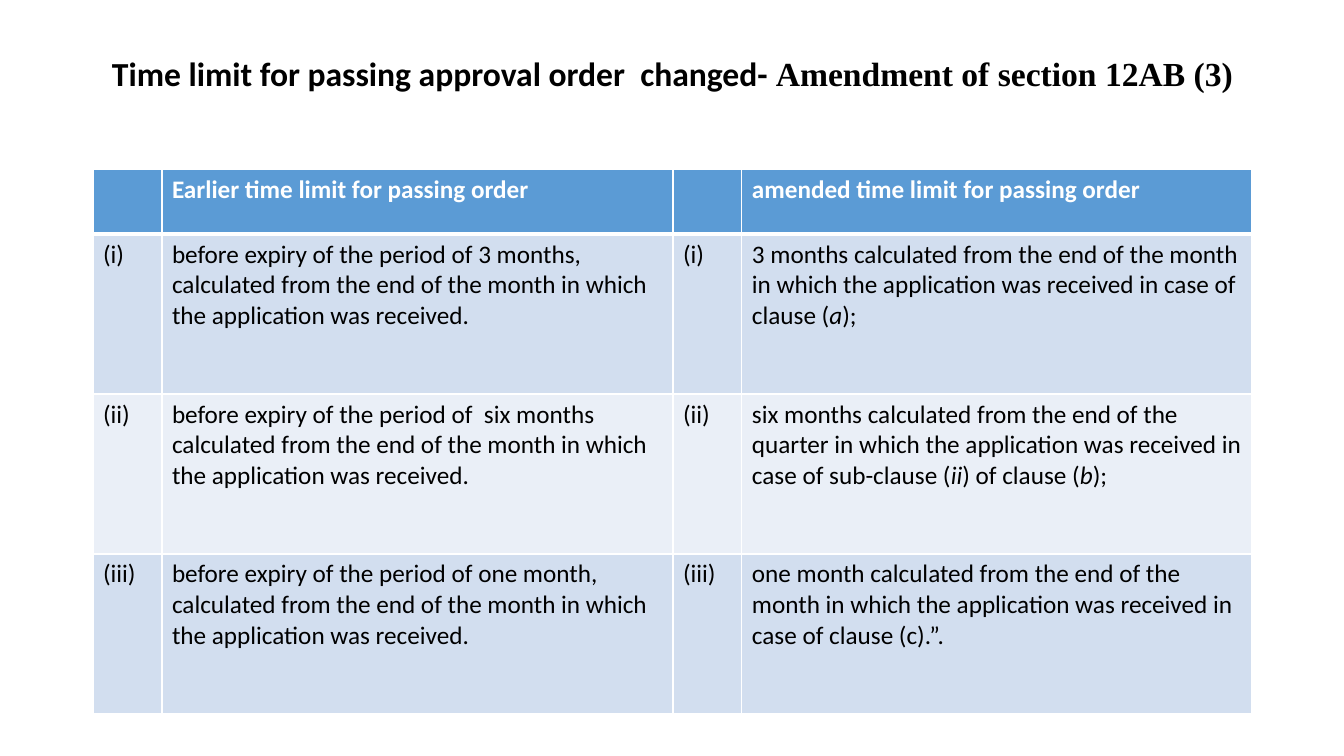
from lxml.etree import SubElement
from pptx import Presentation
from pptx.dml.color import RGBColor
from pptx.enum.text import MSO_ANCHOR, PP_ALIGN
from pptx.oxml.ns import qn
from pptx.util import Pt

TITLE = [
    ("Time limit for passing approval order  changed- ", "Calibri"),
    ("Amendment of section 12AB (3)", "Times New Roman"),
]
HEADINGS = ("", "Earlier time limit for passing order",
            "", "amended time limit for passing order")
# Asterisks enclose italic words.
LIMITS = [
    ("(i)",
     "before expiry of the period of 3 months, calculated from the end of "
     "the month in which the application was received.",
     "3 months calculated from the end of the month in which the application "
     "was received in case of clause (*a*);"),
    ("(ii)",
     "before expiry of the period of  six months  calculated from the end of "
     "the month in which the application was received.",
     "six months calculated from the end of the quarter in which the "
     "application was received in case of sub-clause (*ii*) of clause (*b*);"),
    ("(iii)",
     "before expiry of the period of one month,  calculated from the end of "
     "the month in which the application was received.",
     "one month calculated from the end of the month in which the application "
     "was received in case of clause (c).”."),
]

PX = 914400 / 100.8
SLIDE_W, SLIDE_H = 1344, 756
LEFT, WIDTH = 93, 1159
TITLE_TOP, TITLE_H = 40, 72
TABLE_TOP, HEADER_H, LIMIT_H = 169, 65, 160
COLUMNS = (69, 511, 69, 510)
BLACK, WHITE, HEADER_FILL = "000000", "FFFFFF", "5B9BD5"
BANDS = ("D2DEEF", "EAEFF7")


def px(length):
    return round(length * PX)


def color(value):
    return RGBColor.from_string(value)


def add_run(paragraph, text, size, ink, font="Calibri", bold=False, italic=False):
    run = paragraph.add_run()
    run.text = text
    run.font.name = font
    run.font.size = Pt(size)
    run.font.bold = bold
    run.font.italic = italic
    run.font.color.rgb = color(ink)


def set_borders(cell, top, bottom):
    """Draw white cell edges; must precede the fill, as the schema orders them."""
    properties = cell._tc.get_or_add_tcPr()
    for edge, points in (("L", 1), ("R", 1), ("T", top), ("B", bottom)):
        line = SubElement(properties, qn(f"a:ln{edge}"), w=str(Pt(points)))
        fill = SubElement(line, qn("a:solidFill"))
        SubElement(fill, qn("a:srgbClr"), val=WHITE)


def add_title(slide):
    box = slide.shapes.add_textbox(px(LEFT), px(TITLE_TOP), px(WIDTH), px(TITLE_H))
    frame = box.text_frame
    frame.word_wrap = True
    frame.vertical_anchor = MSO_ANCHOR.MIDDLE
    paragraph = frame.paragraphs[0]
    paragraph.alignment = PP_ALIGN.CENTER
    paragraph.line_spacing = 0.9
    for text, font in TITLE:
        add_run(paragraph, text, 24, BLACK, font, bold=True)


def add_limits_table(slide):
    rows = [HEADINGS] + [(number, earlier, number, amended)
                         for number, earlier, amended in LIMITS]
    heights = [HEADER_H] + [LIMIT_H] * len(LIMITS)
    table = slide.shapes.add_table(
        len(rows), len(COLUMNS), px(LEFT), px(TABLE_TOP),
        px(WIDTH), px(sum(heights))).table
    for column, width in zip(table.columns, COLUMNS):
        column.width = px(width)
    for r, (texts, height) in enumerate(zip(rows, heights)):
        table.rows[r].height = px(height)
        header = r == 0
        for c, text in enumerate(texts):
            cell = table.cell(r, c)
            set_borders(cell, top=3 if r == 1 else 1, bottom=3 if header else 1)
            cell.fill.solid()
            cell.fill.fore_color.rgb = color(HEADER_FILL if header else BANDS[(r - 1) % 2])
            paragraph = cell.text_frame.paragraphs[0]
            for part, words in enumerate(text.split("*")):
                if words:
                    add_run(paragraph, words, 18, WHITE if header else BLACK,
                            bold=header, italic=part % 2 == 1)


def main():
    deck = Presentation()
    deck.slide_width, deck.slide_height = px(SLIDE_W), px(SLIDE_H)
    slide = deck.slides.add_slide(deck.slide_layouts[6])
    add_title(slide)
    add_limits_table(slide)
    deck.save("out.pptx")


if __name__ == "__main__":
    main()
